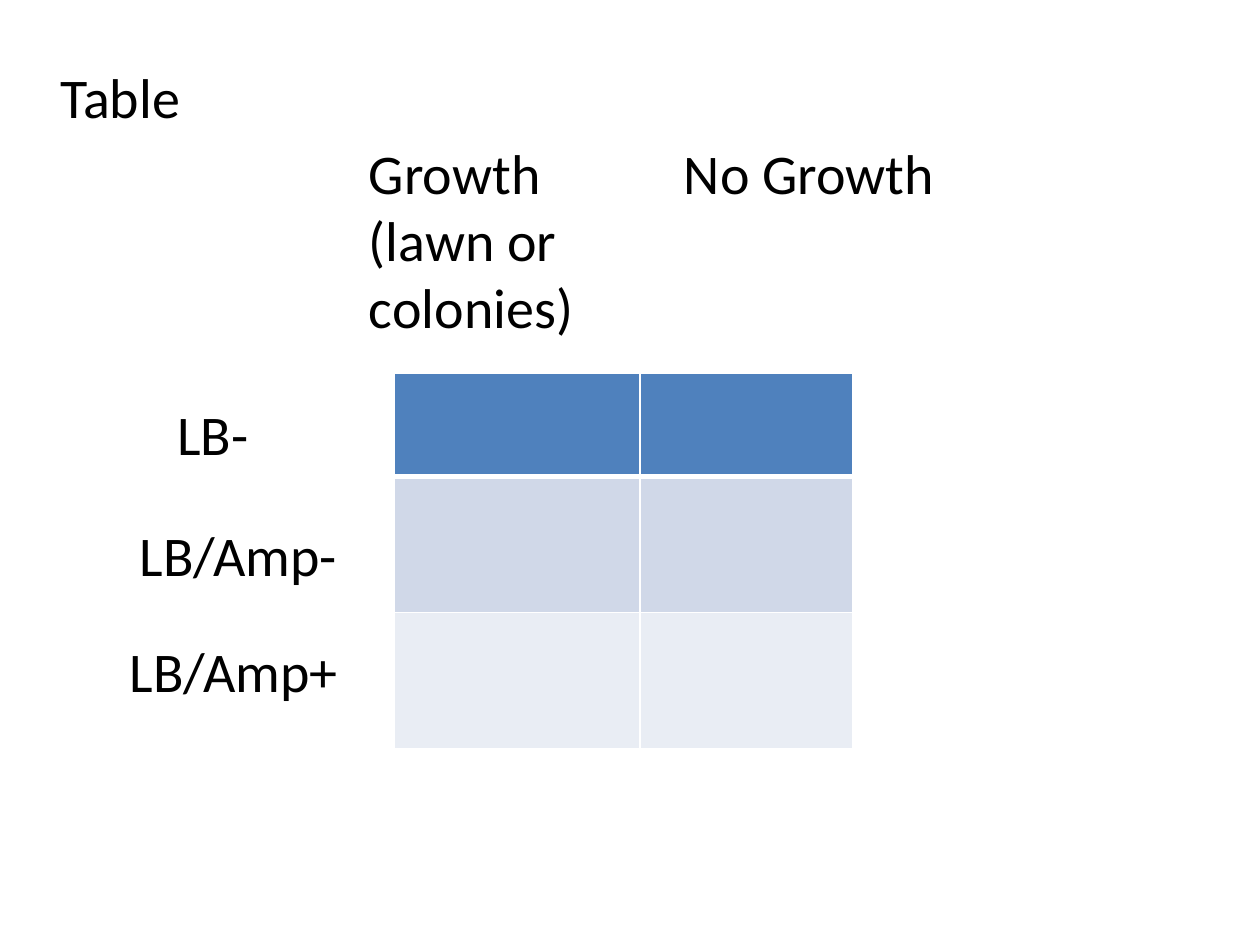
from lxml.etree import SubElement
from pptx import Presentation
from pptx.dml.color import RGBColor
from pptx.oxml.ns import qn
from pptx.util import Inches, Pt

WHITE = "FFFFFF"
BLACK = "000000"
ROW_FILLS = ["4F81BD", "D0D8E8", "E9EDF4"]
COLUMN_WIDTHS = [1.95, 1.69]
ROW_HEIGHTS = [0.82, 1.08, 1.08]
SIDES = ["lnL", "lnR", "lnT", "lnB"]


def color(hex_string):
    return RGBColor.from_string(hex_string)


def add_text(page, text, left, top, width, height):
    box = page.shapes.add_textbox(*map(Inches, (left, top, width, height)))
    box.text_frame.word_wrap = True
    box.text_frame.text = text
    for para in box.text_frame.paragraphs:
        for span in para.runs:
            span.font.name = "Calibri"
            span.font.size = Pt(32)
            span.font.color.rgb = color(BLACK)
    return box


deck = Presentation()
deck.slide_width, deck.slide_height = Inches(10), Inches(7.5)
page = deck.slides.add_slide(deck.slide_layouts[6])

# Title and column headings
add_text(page, "Table", 0.38, 0.45, 9.24, 1.18)
headings = add_text(page, "Growth\tNo Growth\n(lawn or\ncolonies)", 2.83, 1.05, 5.15, 2.79)
heading_props = headings.text_frame.paragraphs[0]._p.get_or_add_pPr()
tab_stops = SubElement(heading_props, qn("a:tabLst"))
SubElement(tab_stops, qn("a:tab"), pos=str(Inches(2.5)), algn="l")

# Row labels
for label, left, top, width in [
    ("LB-", 1.31, 3.12, 1.27),
    ("LB/Amp-", 1.01, 4.08, 1.82),
    ("LB/Amp+", 0.93, 5, 2.2),
]:
    add_text(page, label, left, top, width, 0.64)

# Results table
table = page.shapes.add_table(
    len(ROW_HEIGHTS), len(COLUMN_WIDTHS), Inches(3.13), Inches(2.96),
    Inches(sum(COLUMN_WIDTHS)), Inches(sum(ROW_HEIGHTS)),
).table
for column, width in zip(table.columns, COLUMN_WIDTHS):
    column.width = Inches(width)
for index, (row, height) in enumerate(zip(table.rows, ROW_HEIGHTS)):
    row.height = Inches(height)
    for cell in row.cells:
        cell_props = cell._tc.get_or_add_tcPr()
        for side in SIDES:
            below_header = (index, side) in [(0, "lnB"), (1, "lnT")]
            border = SubElement(cell_props, qn(f"a:{side}"), w=str(Pt(3 if below_header else 1)))
            line_fill = SubElement(border, qn("a:solidFill"))
            SubElement(line_fill, qn("a:srgbClr"), val=WHITE)
        cell.fill.solid()
        cell.fill.fore_color.rgb = color(ROW_FILLS[index])

deck.save("out.pptx")
